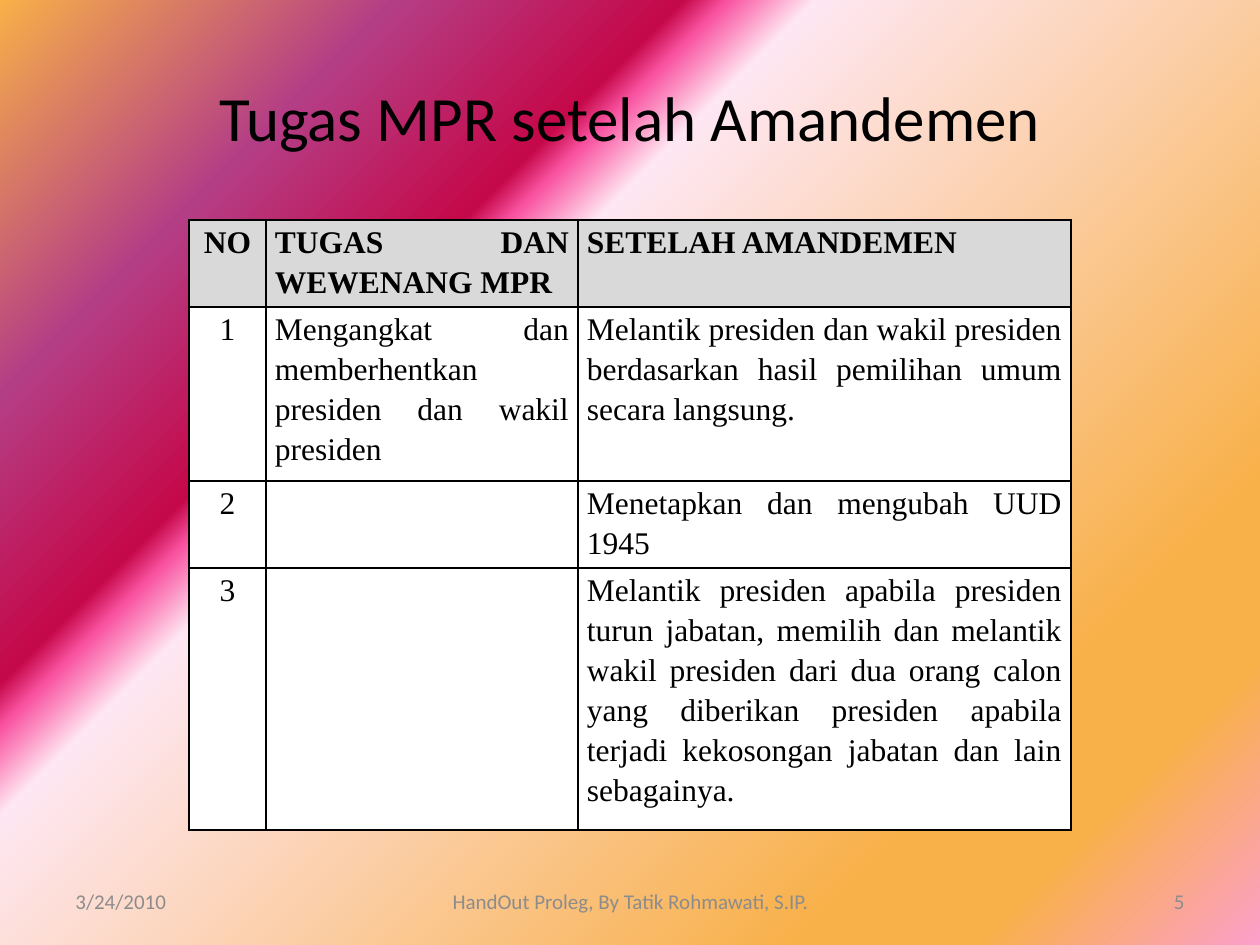
from pptx import Presentation
from pptx.dml.color import RGBColor
from pptx.enum.text import MSO_ANCHOR, PP_ALIGN
from pptx.oxml import parse_xml
from pptx.oxml.ns import nsdecls
from pptx.util import Pt

LEFT, CENTER, RIGHT, JUSTIFY = PP_ALIGN.LEFT, PP_ALIGN.CENTER, PP_ALIGN.RIGHT, PP_ALIGN.JUSTIFY
MIDDLE = MSO_ANCHOR.MIDDLE

BLACK = RGBColor(0x00, 0x00, 0x00)
WHITE = RGBColor(0xFF, 0xFF, 0xFF)
HEADER_GRAY = RGBColor(0xD9, 0xD9, 0xD9)
FOOTER_GRAY = RGBColor(0x8C, 0x8C, 0x8C)

PX_PER_INCH = 126
SLIDE_SIZE = (1260, 945)

# Position in percent, from the bottom right corner outwards
BACKGROUND_STOPS = [
    (0, RGBColor(0xFC, 0x9F, 0xCB)),
    (13, RGBColor(0xF8, 0xB0, 0x49)),
    (21, RGBColor(0xF8, 0xB0, 0x49)),
    (63, RGBColor(0xFE, 0xE7, 0xF2)),
    (67, RGBColor(0xF9, 0x52, 0xA0)),
    (69, RGBColor(0xC5, 0x08, 0x49)),
    (82, RGBColor(0xB4, 0x3E, 0x85)),
    (100, RGBColor(0xF8, 0xB0, 0x49)),
]

TITLE_FONT = {"name": "Calibri", "size": Pt(36)}
FOOTER_FONT = {"name": "Calibri", "size": Pt(12)}
TABLE_FONT = {"name": "Times New Roman", "size": Pt(18)}

# Text, box (left, top, width, height), alignment, font, colour
TEXTS = [
    ("Tugas MPR setelah Amandemen", (63, 38, 1134, 157), CENTER, TITLE_FONT, BLACK),
    ("3/24/2010", (63, 876, 294, 50), LEFT, FOOTER_FONT, FOOTER_GRAY),
    ("HandOut Proleg, By Tatik Rohmawati, S.IP.", (431, 876, 399, 50), CENTER,
     FOOTER_FONT, FOOTER_GRAY),
    ("5", (903, 876, 294, 50), RIGHT, FOOTER_FONT, FOOTER_GRAY),
]

TABLE_ROWS = [
    ("NO", "TUGAS DAN WEWENANG MPR", "SETELAH AMANDEMEN"),
    ("1", "Mengangkat dan memberhentkan presiden dan wakil presiden",
     "Melantik presiden dan wakil presiden berdasarkan hasil pemilihan umum secara langsung."),
    ("2", "", "Menetapkan dan mengubah UUD 1945"),
    ("3", "", "Melantik presiden apabila presiden turun jabatan, memilih dan melantik wakil "
     "presiden dari dua orang calon yang diberikan presiden apabila terjadi kekosongan "
     "jabatan dan lain sebagainya."),
]
TABLE_ORIGIN = (189, 220)
COLUMN_WIDTHS = (77, 312, 493)
ROW_HEIGHTS = (66, 131, 66, 262)
COLUMN_ALIGNMENTS = (CENTER, JUSTIFY, JUSTIFY)
CELL_MARGINS = {"margin_left": 9, "margin_top": 0, "margin_right": 9, "margin_bottom": 0}


def px(length):
    return round(length * 914400 / PX_PER_INCH)


def set_font(font, settings, color):
    for attribute, value in settings.items():
        setattr(font, attribute, value)
    font.color.rgb = color


def set_background(slide):
    """Fill the slide with a gradient centred on its bottom right corner."""
    slide.background.fill.solid()
    solid = slide.element.find(".//{*}bgPr/{*}solidFill")
    stops = "".join(
        f'<a:gs pos="{percent * 1000}"><a:srgbClr val="{color}"/></a:gs>'
        for percent, color in BACKGROUND_STOPS
    )
    gradient = parse_xml(
        f'<a:gradFill {nsdecls("a")} rotWithShape="1"><a:gsLst>{stops}</a:gsLst>'
        '<a:path path="circle"><a:fillToRect l="100000" t="100000"/></a:path></a:gradFill>'
    )
    solid.getparent().replace(solid, gradient)


def add_text(slide, text, box, alignment, font, color):
    frame = slide.shapes.add_textbox(*map(px, box)).text_frame
    frame.word_wrap = True
    frame.vertical_anchor = MIDDLE
    paragraph = frame.paragraphs[0]
    paragraph.text = text
    paragraph.alignment = alignment
    set_font(paragraph.runs[0].font, font, color)


def add_borders(cell):
    properties = cell._tc.get_or_add_tcPr()
    for index, side in enumerate("LRTB"):
        properties.insert(index, parse_xml(
            f'<a:ln{side} {nsdecls("a")} w="{Pt(1)}"><a:solidFill>'
            f'<a:srgbClr val="{BLACK}"/></a:solidFill></a:ln{side}>'
        ))


def fill_cell(cell, text, alignment, is_header):
    for attribute, margin in CELL_MARGINS.items():
        setattr(cell, attribute, px(margin))
    cell.fill.solid()
    cell.fill.fore_color.rgb = HEADER_GRAY if is_header else WHITE
    add_borders(cell)
    paragraph = cell.text_frame.paragraphs[0]
    paragraph.alignment = alignment
    paragraph.line_spacing = 1.15
    if text:
        run = paragraph.add_run()
        run.text = text
        set_font(run.font, {**TABLE_FONT, "bold": is_header}, BLACK)


def add_duties_table(slide):
    box = (*TABLE_ORIGIN, sum(COLUMN_WIDTHS), sum(ROW_HEIGHTS))
    table = slide.shapes.add_table(
        len(ROW_HEIGHTS), len(COLUMN_WIDTHS), *map(px, box)).table
    table.first_row = table.horz_banding = False
    for column, width in zip(table.columns, COLUMN_WIDTHS):
        column.width = px(width)
    for row_index, (row, height) in enumerate(zip(table.rows, ROW_HEIGHTS)):
        row.height = px(height)
        for cell, text, alignment in zip(row.cells, TABLE_ROWS[row_index], COLUMN_ALIGNMENTS):
            fill_cell(cell, text, alignment, row_index == 0)


def main():
    presentation = Presentation()
    presentation.slide_width, presentation.slide_height = map(px, SLIDE_SIZE)
    slide = presentation.slides.add_slide(presentation.slide_layouts[6])
    set_background(slide)
    for entry in TEXTS:
        add_text(slide, *entry)
    add_duties_table(slide)
    presentation.save("out.pptx")


if __name__ == "__main__":
    main()
